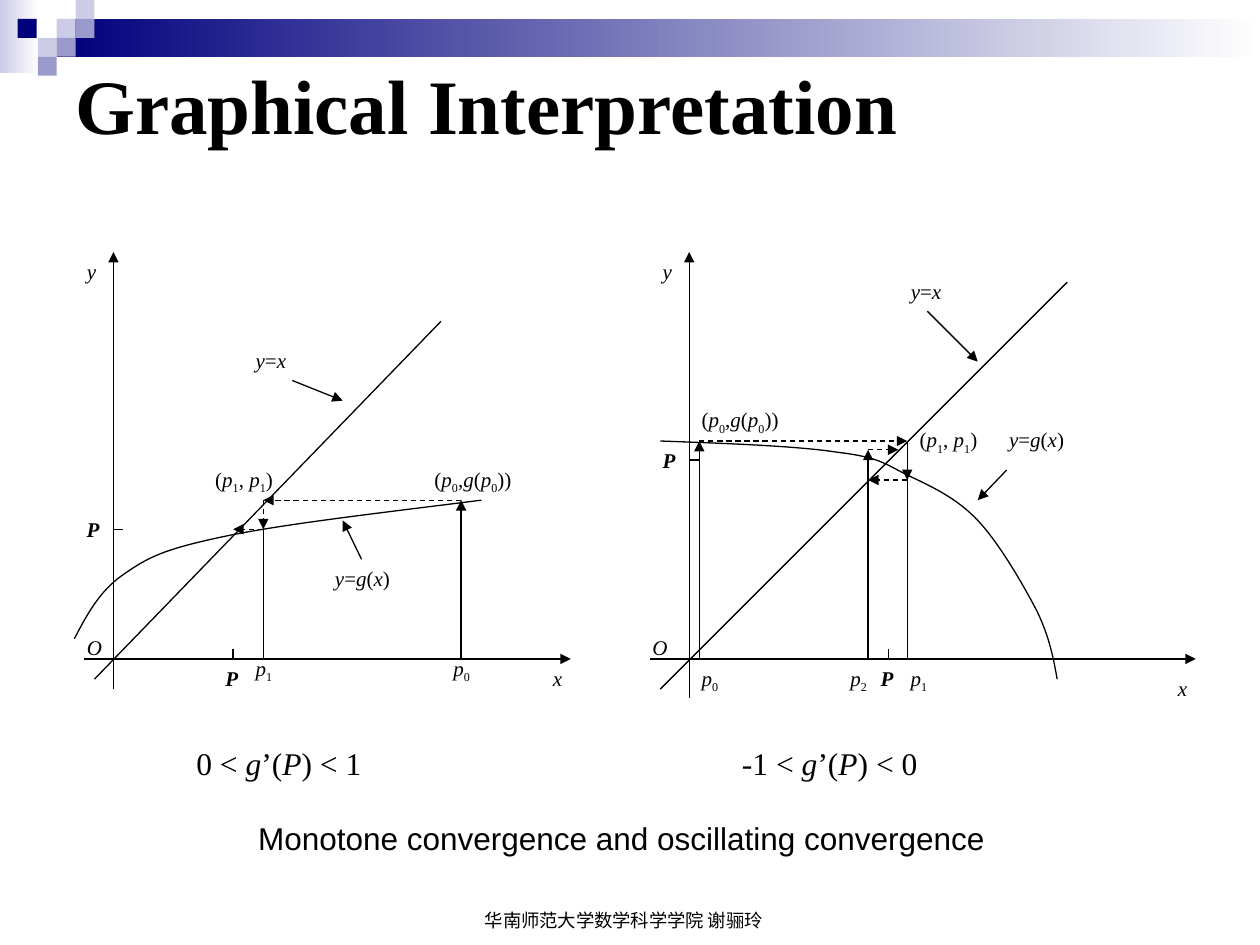
from itertools import groupby

from lxml import etree
from pptx import Presentation
from pptx.dml.color import RGBColor
from pptx.enum.dml import MSO_LINE
from pptx.enum.shapes import MSO_CONNECTOR, MSO_SHAPE
from pptx.enum.text import MSO_ANCHOR
from pptx.oxml.ns import qn
from pptx.util import Pt

PX = 9144
RECT = MSO_SHAPE.RECTANGLE
STRAIGHT = MSO_CONNECTOR.STRAIGHT
DASH = MSO_LINE.DASH
MIDDLE = MSO_ANCHOR.MIDDLE
SERIF, SANS = "Times New Roman", "Arial"
COLORS = {name: RGBColor.from_string(value) for name, value in {
    "ink": "000000", "white": "FFFFFF", "navy": "00007D",
    "mid": "9999CC", "pale": "CCCCE6"}.items()}

prs = Presentation()
prs.slide_width, prs.slide_height = 1000 * PX, 750 * PX
s = prs.slides.add_slide(prs.slide_layouts[6])


def add_text(x, y, w, h, text, size, font, math=False):
    tf = s.shapes.add_textbox(x * PX, y * PX, w * PX, h * PX).text_frame
    tf.word_wrap = True
    p = tf.paragraphs[0]

    def style(ch):
        return "var" if ch.isalpha() else "sub" if ch.isdigit() and size == 12 else "plain"

    pieces = groupby(text, style) if math else [("plain", text)]
    for kind, chars in pieces:
        r = p.add_run()
        r.text = "".join(chars)
        r.font.size, r.font.name = Pt(size), font
        r.font.color.rgb = COLORS["ink"]
        if kind == "var":
            r.font.italic = True
            r.font.bold = text == "P"
        elif kind == "sub":
            r.font._element.set("baseline", "-25000")
    return tf


def add_line(x1, y1, x2, y2, arrow=False, dash=False):
    c = s.shapes.add_connector(STRAIGHT, x1 * PX, y1 * PX, x2 * PX, y2 * PX)
    c.line.color.rgb = COLORS["ink"]
    c.line.width = Pt(0.75)
    if dash:
        c.line.dash_style = DASH
    if arrow:
        etree.SubElement(c.line._get_or_add_ln(), qn("a:tailEnd"), type="triangle")
    etree.SubElement(c._element.spPr, qn("a:effectLst"))


banner = [
    (0, 0, 31, 58, "pale", "white"),
    (45, 15, 955, 30, "navy", "white"),
    (45, 15, 15, 15, "pale", None),
    (60, 0, 15, 15, "pale", None),
    (60, 15, 15, 15, "mid", None),
    (30, 30, 15, 15, "pale", None),
    (14, 15, 15, 15, "navy", None),
    (45, 30, 15, 15, "mid", None),
    (30, 45, 15, 15, "mid", None),
]
for x, y, w, h, color, fade in banner:
    sp = s.shapes.add_shape(RECT, x * PX, y * PX, w * PX, h * PX)
    sp.shadow.inherit = False
    sp.line.fill.background()
    if fade:
        sp.fill.gradient()
        sp.fill.gradient_angle = 0
        for stop, name, position in zip(sp.fill.gradient_stops, (color, fade), (0, 1)):
            stop.color.rgb = COLORS[name]
            stop.position = position
    else:
        sp.fill.solid()
        sp.fill.fore_color.rgb = COLORS[color]

title = add_text(50, 7, 900, 150, "Graphical Interpretation", 44, SERIF)
title.vertical_anchor = MIDDLE
title.paragraphs[0].runs[0].font.bold = True

plain_lines = [
    (75, 539, 350, 255), (185, 515, 185, 523), (90, 420, 98, 420), (209, 420, 209, 523),
    (524, 547, 847, 224), (720, 373, 720, 523), (689, 381, 689, 523),
    (705, 515, 705, 523), (555, 365, 547, 365),
]
arrows = [
    (67, 523, 453, 523), (90, 547, 90, 200), (366, 523, 366, 397),
    (287, 444, 272, 413), (232, 302, 272, 318),
    (516, 523, 949, 523), (547, 554, 547, 200), (555, 523, 555, 350),
    (720, 350, 720, 381), (689, 381, 689, 357), (799, 373, 776, 397), (736, 247, 776, 287),
]
dashed_arrows = [
    (366, 397, 209, 397), (209, 397, 209, 420), (209, 420, 185, 420),
    (555, 350, 720, 350), (720, 381, 689, 381), (689, 357, 713, 357),
]
for ends in plain_lines:
    add_line(*ends)
for ends in arrows:
    add_line(*ends, arrow=True)
for ends in dashed_arrows:
    add_line(*ends, arrow=True, dash=True)

curves = [
    [(59, 507), (69, 488), (79, 469), (98, 456), (118, 442), (130, 436), (177, 426),
     (224, 416), (303, 407), (382, 397)],
    [(524, 350), (578, 352), (633, 354), (665, 359), (698, 363), (702, 368), (720, 377),
     (739, 386), (759, 395), (776, 413), (793, 431), (812, 464), (823, 485),
     (833, 506), (836, 522), (839, 539)],
]
for points in curves:
    builder = s.shapes.build_freeform(*points[0], scale=PX)
    builder.add_line_segments(points[1:], close=False)
    sp = builder.convert_to_shape()
    sp.shadow.inherit = False
    sp.fill.background()
    sp.line.color.rgb = COLORS["ink"]
    sp.line.width = Pt(0.75)
    outline = next(sp._element.iter(qn("a:path")))
    segments = outline.findall(qn("a:lnTo"))
    for i in range(0, len(segments), 3):
        bezier = etree.SubElement(outline, qn("a:cubicBezTo"))
        for segment in segments[i:i + 3]:
            bezier.append(segment[0])
            outline.remove(segment)

labels = [
    (59, 499, 39, "O"), (169, 523, 39, "P"), (59, 405, 24, "P"), (429, 523, 39, "x"),
    (59, 200, 39, "y"), (350, 515, 63, "p0"), (193, 515, 63, "p1"),
    (335, 365, 87, "(p0,g(p0))"), (161, 365, 87, "(p1, p1)"),
    (256, 444, 71, "y=g(x)"), (193, 271, 71, "y=x"),
    (713, 216, 71, "y=x"), (508, 499, 39, "O"), (925, 531, 39, "x"), (516, 200, 39, "y"),
    (791, 334, 71, "y=g(x)"), (547, 523, 63, "p0"), (713, 523, 63, "p1"),
    (665, 523, 63, "p2"), (689, 523, 31, "P"), (516, 350, 31, "P"),
    (547, 318, 87, "(p0,g(p0))"), (720, 334, 87, "(p1, p1)"),
]
for x, y, w, text in labels:
    add_text(x, y, w, 30, text, 12, SERIF, math=True)

add_text(146, 586, 181, 40, "0 < g’(P) < 1", 18, SERIF, math=True)
add_text(579, 586, 181, 40, "-1 < g’(P) < 0", 18, SERIF, math=True)
add_text(375, 717, 258, 25, "华南师范大学数学科学学院 谢骊玲", 10.5, SANS)
add_text(195, 645, 598, 40, "Monotone convergence and oscillating convergence", 18, SANS)

prs.save("out.pptx")
